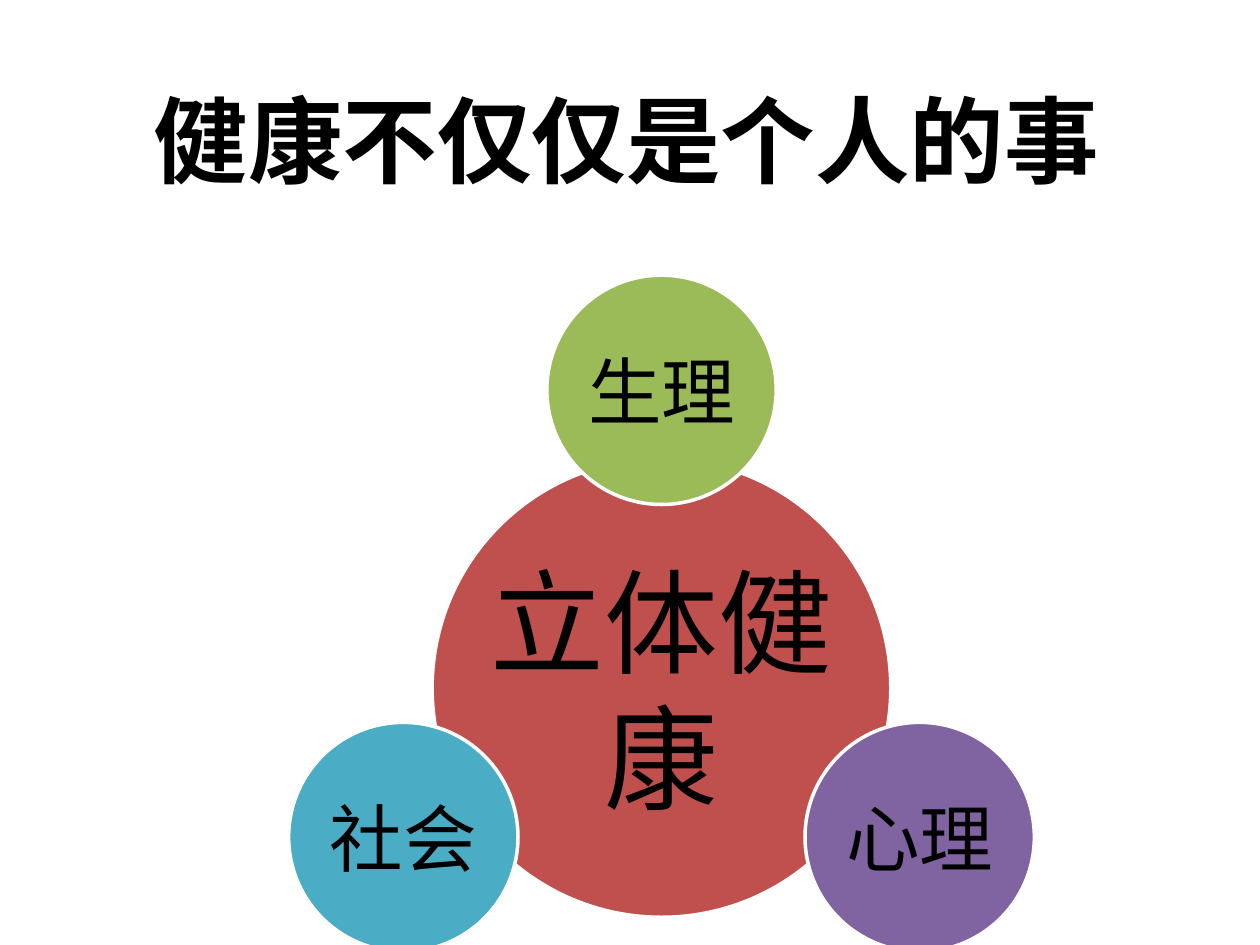
from math import cos, radians, sin

from lxml.etree import SubElement
from pptx import Presentation
from pptx.dml.color import RGBColor
from pptx.enum.shapes import MSO_SHAPE
from pptx.enum.text import MSO_ANCHOR, PP_ALIGN
from pptx.oxml.ns import qn
from pptx.util import Inches, Pt

COLORS = {
    "red": "C0504D",
    "green": "9BBB59",
    "purple": "8064A2",
    "blue": "4BACC6",
    "outline": "FFFFFF",
    "text": "000000",
}
FONT = "Calibri"
SATELLITES = [("生理", "green"), ("心理", "purple"), ("社会", "blue")]


def color(name):
    return RGBColor.from_string(COLORS[name])


def write_text(frame, text, size, bold=False, inset=0.1):
    frame.word_wrap = True
    frame.vertical_anchor = MSO_ANCHOR.MIDDLE
    frame.margin_left = frame.margin_right = Inches(inset)
    frame.margin_top = frame.margin_bottom = Inches(inset)
    para = frame.paragraphs[0]
    para.alignment = PP_ALIGN.CENTER
    span = para.add_run()
    span.text = text
    span.font.name = FONT
    span.font.size = Pt(size)
    span.font.bold = bold
    span.font.color.rgb = color("text")
    SubElement(span.font._element, qn("a:ea"), typeface=FONT)


def add_title(page, text, left, top, width, height):
    title = page.shapes.title
    title.left, title.top = Inches(left), Inches(top)
    title.width, title.height = Inches(width), Inches(height)
    write_text(title.text_frame, text, size=54, bold=True, inset=0.05)


def add_circle(page, center_x, center_y, diameter, fill, text, size, inset):
    """Draw a circle whose label may use its full bounding square."""
    box = [Inches(v) for v in (center_x - diameter / 2, center_y - diameter / 2,
                               diameter, diameter)]
    circle = page.shapes.add_shape(MSO_SHAPE.OVAL, *box)
    circle.shadow.inherit = False
    circle.fill.solid()
    circle.fill.fore_color.rgb = color(fill)
    circle.line.color.rgb = color("outline")
    circle.line.width = Pt(2)
    label = page.shapes.add_textbox(*box)
    write_text(label.text_frame, text, size, inset=inset)


def add_radial_diagram(page, center_x, center_y, diameter):
    """Draw the hub with its satellites evenly spaced, clockwise from the top."""
    add_circle(page, center_x, center_y, diameter, "red", "立体健康", 65, 0.09)
    orbit = 0.65 * diameter
    for index, (text, fill) in enumerate(SATELLITES):
        angle = radians(index * 360 / len(SATELLITES) - 90)
        add_circle(page, center_x + orbit * cos(angle), center_y + orbit * sin(angle),
                   diameter / 2, fill, text, 42, 0.06)


def main():
    deck = Presentation()
    deck.slide_width, deck.slide_height = Inches(10), Inches(7.5)
    page = deck.slides.add_slide(deck.slide_layouts[5])
    add_radial_diagram(page, center_x=5.25, center_y=5.46, diameter=3.64)
    add_title(page, "健康不仅仅是个人的事", left=-0.03, top=0.6, width=10, height=1.01)
    deck.save("out.pptx")


if __name__ == "__main__":
    main()
